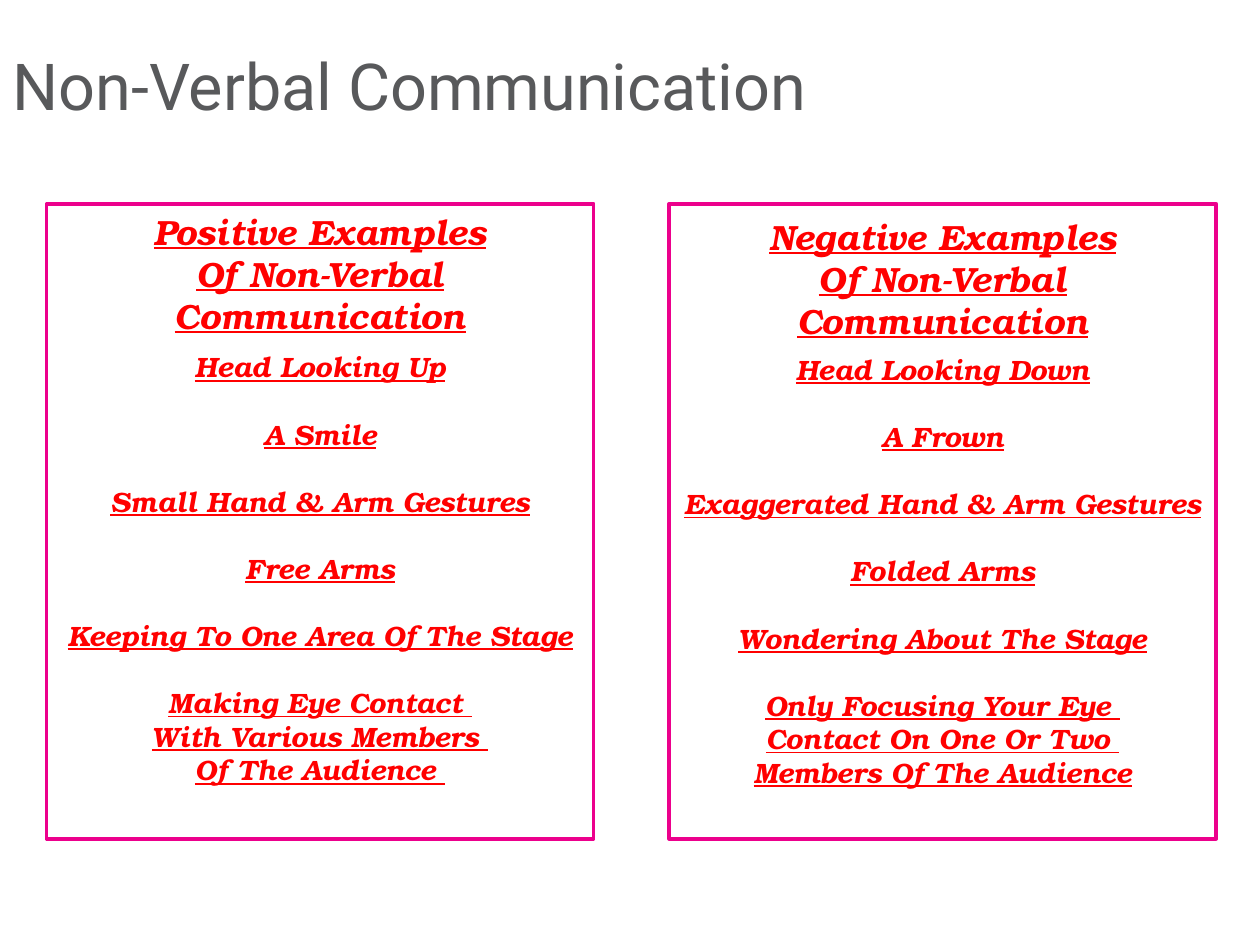
from pptx import Presentation
from pptx.dml.color import RGBColor
from pptx.enum.shapes import MSO_SHAPE
from pptx.enum.text import MSO_ANCHOR, PP_ALIGN
from pptx.util import Cm, Pt

RECT = MSO_SHAPE.RECTANGLE
MIDDLE = MSO_ANCHOR.MIDDLE
TOP = MSO_ANCHOR.TOP
LEFT = PP_ALIGN.LEFT
CENTER = PP_ALIGN.CENTER
GRAY = RGBColor(0x58, 0x59, 0x5B)
PINK = RGBColor(0xEC, 0x00, 0x8C)
RED = RGBColor(0xFF, 0x00, 0x00)
WHITE = RGBColor(0xFF, 0xFF, 0xFF)

WIDE, HIGH = 11.03, 12.8
POSITIVE = [
    ["Head Looking Up"],
    ["A Smile"],
    ["Small Hand & Arm Gestures"],
    ["Free Arms"],
    ["Keeping To One Area Of The Stage"],
    ["Making Eye Contact ", "With Various Members ", "Of The Audience "],
]
NEGATIVE = [
    ["Head Looking Down"],
    ["A Frown"],
    ["Exaggerated Hand & Arm Gestures"],
    ["Folded Arms"],
    ["Wondering About The Stage"],
    ["Only Focusing Your Eye ", "Contact On One Or Two ", "Members Of The Audience"],
]


def add_title(slide, text, x, y, w, h):
    """Move and format the title placeholder."""
    title = slide.shapes.title
    title.left, title.top, title.width, title.height = Cm(x), Cm(y), Cm(w), Cm(h)
    frame = title.text_frame
    frame.text = text
    frame.vertical_anchor = MIDDLE
    para = frame.paragraphs[0]
    para.alignment = LEFT
    para.font.name, para.font.size = "Roboto", Pt(37)
    para.font.color.rgb = GRAY


def add_frame(slide, x, y, w, h):
    """Draw the outlined frame of a panel."""
    frame = slide.shapes.add_shape(RECT, Cm(x), Cm(y), Cm(w), Cm(h))
    frame.shadow.inherit = False
    frame.fill.solid()
    frame.fill.fore_color.rgb = WHITE
    frame.line.color.rgb = PINK
    frame.line.width = Pt(2)


def add_lines(slide, groups, size, gap, x, y, w, h):
    """Write groups of centred lines with a gap between groups."""
    frame = slide.shapes.add_textbox(Cm(x), Cm(y), Cm(w), Cm(h)).text_frame
    frame.word_wrap = True
    frame.vertical_anchor = TOP
    for index, group in enumerate(groups):
        for row, text in enumerate(group):
            first = index == row == 0
            para = frame.paragraphs[0] if first else frame.add_paragraph()
            para.text = text
            para.alignment = CENTER
            para.space_before = Pt(gap if index and not row else 0)
            font = para.font
            font.name, font.size = "TeX Gyre Bonum", Pt(size)
            font.bold = font.italic = font.underline = True
            font.color.rgb = RED


def add_panel(slide, kind, items, x, y, head, body):
    """Build one panel: frame, heading and list of examples."""
    add_frame(slide, x, y, WIDE, HIGH)
    heading = [[f"{kind} Examples", "Of Non-Verbal Communication"]]
    add_lines(slide, heading, 20, 0, x, y + head, WIDE, 2.82)
    add_lines(slide, items, 16, 19.2, x, y + body, WIDE, 9.15)


def main():
    """Build and save the slide."""
    deck = Presentation()
    deck.slide_width, deck.slide_height = Cm(25.4), Cm(19.05)
    slide = deck.slides.add_slide(deck.slide_layouts[5])
    add_title(slide, "Non-Verbal Communication", 0, 0.61, 19.35, 2.21)
    add_panel(slide, "Positive", POSITIVE, 0.94, 4.11, 0, 2.82)
    add_panel(slide, "Negative", NEGATIVE, 13.49, 4.11, 0.1, 2.87)
    deck.save("out.pptx")


if __name__ == "__main__":
    main()
